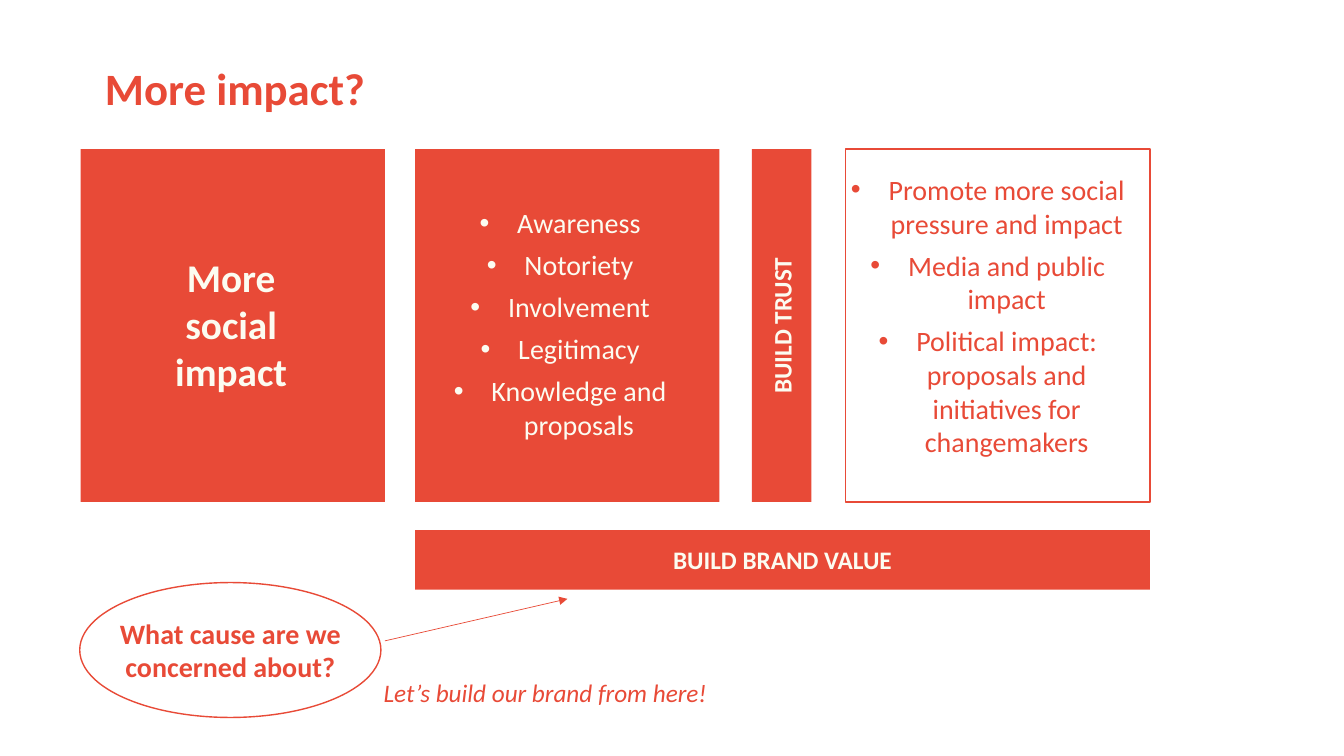
from dataclasses import dataclass

from lxml.etree import SubElement
from pptx import Presentation
from pptx.dml.color import RGBColor
from pptx.enum.shapes import MSO_CONNECTOR, MSO_SHAPE
from pptx.enum.text import MSO_ANCHOR, MSO_AUTO_SIZE, PP_ALIGN
from pptx.oxml.ns import qn
from pptx.util import Cm, Pt


@dataclass(frozen=True)
class Theme:
    red: RGBColor = RGBColor(0xE8, 0x4A, 0x37)
    cream: RGBColor = RGBColor(0xFC, 0xFC, 0xF1)
    font: str = "Calibri"
    title: int = 32
    heading: int = 28
    body: int = 20
    label: int = 18


THEME = Theme()


def place(sp, box):
    sp.left, sp.top, sp.width, sp.height = (Cm(v) for v in box)


def format_text(p, size, color, bold=False, italic=False, align=PP_ALIGN.CENTER):
    p.alignment = align
    for r in p.runs:
        f = r.font
        f.name, f.size, f.bold, f.italic = THEME.font, Pt(size), bold, italic
        f.color.rgb = color


def add_panel(slide, box, filled=True, kind=MSO_SHAPE.RECTANGLE):
    sp = slide.shapes.add_shape(kind, *(Cm(v) for v in box))
    sp.shadow.inherit = False
    if filled:
        sp.fill.solid()
        sp.fill.fore_color.rgb = THEME.red
        sp.line.fill.background()
    else:
        sp.fill.background()
        sp.line.color.rgb = THEME.red
        sp.line.width = Pt(1)


def add_label(slide, box, text, size, color, rotation=0, **style):
    tb = slide.shapes.add_textbox(*(Cm(v) for v in box))
    tb.rotation = rotation
    tf = tb.text_frame
    tf.word_wrap = True
    tf.text = text
    format_text(tf.paragraphs[0], size, color, **style)


def centred(box, width, height):
    x, y, w, h = box
    return x + (w - width) / 2, y + (h - height) / 2, width, height


def add_title(slide, box, text):
    sp = slide.shapes.title
    place(sp, box)
    tf = sp.text_frame
    tf.text = text
    tf.vertical_anchor = MSO_ANCHOR.TOP
    tf.auto_size = MSO_AUTO_SIZE.NONE
    p = tf.paragraphs[0]
    p.line_spacing = 0.9
    format_text(p, THEME.title, THEME.red, bold=True, align=PP_ALIGN.LEFT)


def add_bullet(p, color):
    pPr = p._p.get_or_add_pPr()
    pPr.set("marL", str(Cm(0.95)))
    pPr.set("indent", str(-Cm(0.95)))
    clr = SubElement(pPr, qn("a:buClr"))
    SubElement(clr, qn("a:srgbClr"), val=str(color))
    SubElement(pPr, qn("a:buFont"), typeface="Arial")
    SubElement(pPr, qn("a:buChar"), char="•")


def add_list(sp, box, items, color):
    place(sp, box)
    tf = sp.text_frame
    tf.text = "\n".join(items)
    tf.auto_size = MSO_AUTO_SIZE.NONE
    for p in tf.paragraphs:
        add_bullet(p, color)
        p.space_before, p.space_after = Pt(0), Pt(6)
        format_text(p, THEME.body, color)


def add_impact(slide, box):
    x, y, _, _ = box
    add_panel(slide, box)
    add_label(slide, (x + 1.32, y + 2.49, 4.95, 3.84), "More social impact",
              THEME.heading, THEME.cream, bold=True)


def add_list_panel(slide, sp, box, offset, size, items, filled):
    add_panel(slide, box, filled)
    # Keep the list in front of its panel
    slide.shapes._spTree.append(sp._element)
    text_box = (box[0] + offset[0], box[1] + offset[1], *size)
    add_list(sp, text_box, items, THEME.cream if filled else THEME.red)


def add_bar(slide, box, text, length, rotation=0):
    add_panel(slide, box)
    add_label(slide, centred(box, length, 1.02), text, THEME.label, THEME.cream,
              rotation, bold=True)


def add_question(slide, box):
    x, y, w, _ = box
    add_panel(slide, box, filled=False, kind=MSO_SHAPE.OVAL)
    add_label(slide, centred(box, 7.67, 1.96), "What cause are we concerned about?",
              THEME.body, THEME.red, bold=True)
    # Arrow towards the brand value bar
    start, end = (x + w + 0.1, y + 1.47), (x + w + 4.7, y + 0.41)
    cn = slide.shapes.add_connector(MSO_CONNECTOR.STRAIGHT,
                                    *(Cm(v) for v in start + end))
    cn.line.color.rgb = THEME.red
    cn.line.width = Pt(0.5)
    SubElement(cn.line._get_or_add_ln(), qn("a:tailEnd"), type="triangle")
    SubElement(cn._element.spPr, qn("a:effectLst"))
    # Closing remark
    add_label(slide, (x + w - 0.18, y + 2.26, 14.55, 1.02),
              "Let’s build our brand from here!", THEME.label, THEME.red,
              italic=True, align=PP_ALIGN.LEFT)


def build_impact_slide(prs):
    slide = prs.slides.add_slide(prs.slide_layouts[3])
    _, gains, outcomes = slide.placeholders
    top, width, height, bar = 3.76, 7.67, 8.89, 1.5
    gains_x, outcomes_x = 10.46, 21.31
    add_title(slide, (2.39, 1.55, 22.73, 2.39), "More impact?")

    # Row of panels
    add_impact(slide, (2.03, top, width, height))
    add_list_panel(slide, gains, (gains_x, top, width, height), (0.43, 1.3),
                   (6.45, 6.25),
                   ["Awareness", "Notoriety", "Involvement", "Legitimacy",
                    "Knowledge and proposals"], filled=True)
    add_list_panel(slide, outcomes, (outcomes_x, top, width, height), (-0.25, 0.46),
                   (width, 8.38),
                   ["Promote more social pressure and impact",
                    "Media and public impact",
                    "Political impact: proposals and initiatives for changemakers"],
                   filled=False)

    # Bars between and below the lists
    add_bar(slide, (18.95, top, bar, height), "BUILD TRUST", 8.18, rotation=270)
    add_bar(slide, (gains_x, 13.36, outcomes_x + width - gains_x, bar),
            "BUILD BRAND VALUE", 17.02)

    # Question at the foot
    add_question(slide, (2.01, 14.68, 7.59, 3.4))


def main():
    prs = Presentation()
    prs.slide_width, prs.slide_height = Cm(33.87), Cm(19.05)
    build_impact_slide(prs)
    prs.save("out.pptx")


if __name__ == "__main__":
    main()
